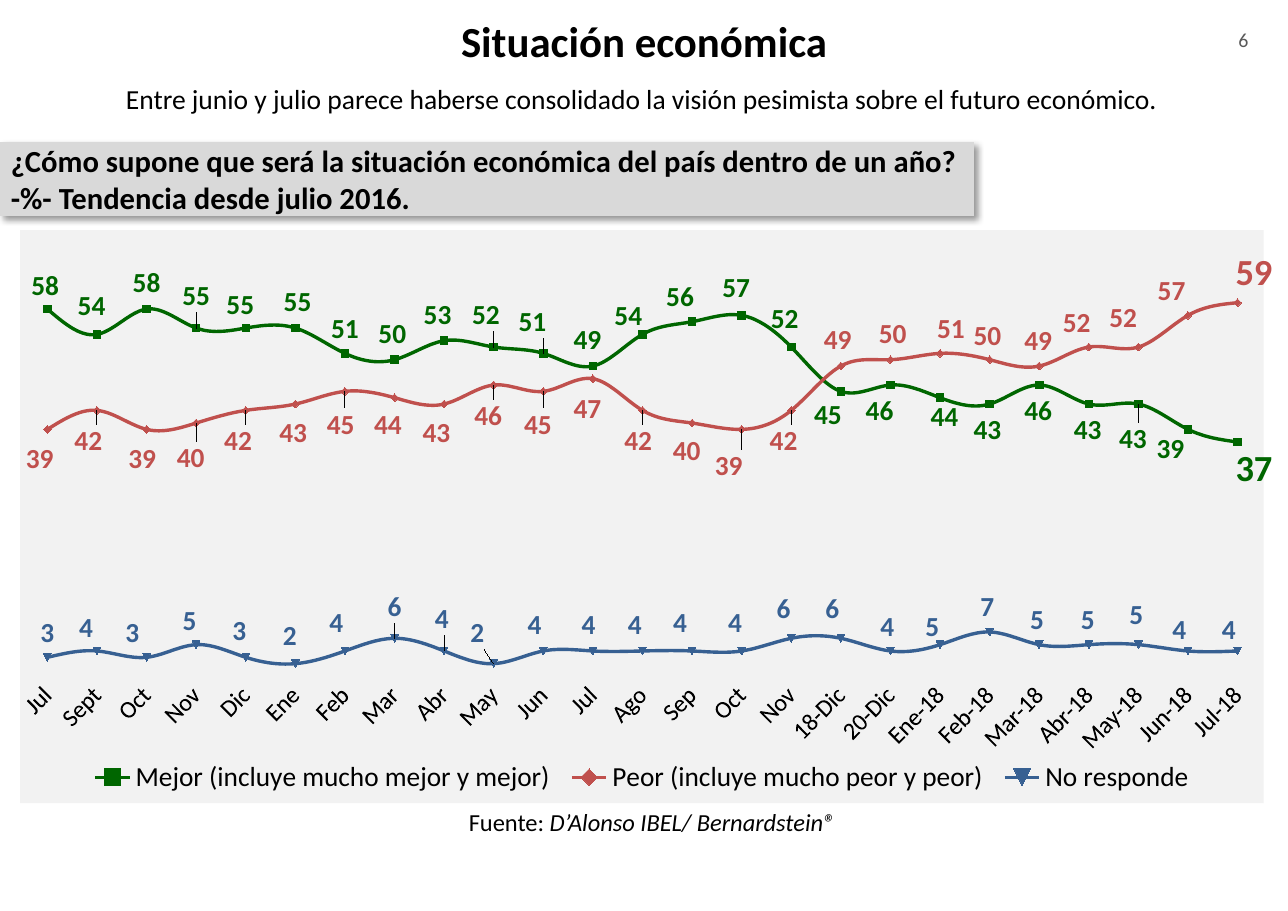
from lxml import etree
from pptx import Presentation
from pptx.chart.data import CategoryChartData
from pptx.dml.color import RGBColor
from pptx.enum.chart import (XL_CHART_TYPE, XL_LABEL_POSITION, XL_LEGEND_POSITION,
                             XL_MARKER_STYLE, XL_TICK_MARK)
from pptx.enum.shapes import MSO_SHAPE
from pptx.enum.text import MSO_ANCHOR, PP_ALIGN
from pptx.oxml import parse_xml
from pptx.oxml.ns import nsdecls, qn
from pptx.util import Inches, Pt

LINE = XL_CHART_TYPE.LINE_MARKERS
CENTER_LABEL = XL_LABEL_POSITION.CENTER
BOTTOM = XL_LEGEND_POSITION.BOTTOM
AUTO = XL_MARKER_STYLE.AUTOMATIC
NO_TICK = XL_TICK_MARK.NONE
RECT = MSO_SHAPE.RECTANGLE
TOP, MIDDLE = MSO_ANCHOR.TOP, MSO_ANCHOR.MIDDLE
LEFT, CENTER = PP_ALIGN.LEFT, PP_ALIGN.CENTER

COLORS = {"text": "000000", "number": "595959", "band": "D9D9D9", "panel": "F2F2F2",
          "better": "006600", "worse": "C0504D", "unknown": "376092"}
CHART_W, CHART_H = 11.38, 5.2


def style(font, size, color="text", bold=False):
    font.name = "Calibri"
    font.size = Pt(size)
    font.bold = bold
    font.color.rgb = RGBColor.from_string(COLORS[color])


def write(sp, box, lines, size, color="text", bold=False, align=CENTER, anchor=MIDDLE):
    sp.left, sp.top, sp.width, sp.height = [Inches(v) for v in box]
    tf = sp.text_frame
    tf.word_wrap = True
    tf.vertical_anchor = anchor
    for i, line in enumerate(lines):
        p = tf.paragraphs[0] if i == 0 else tf.add_paragraph()
        p.alignment = align
        for text, italic in line:
            r = p.add_run()
            r.text = text
            if italic:
                r.font.italic = True
        style(p.font, size, color, bold)


prs = Presentation()
prs.slide_width, prs.slide_height = Inches(11.69), Inches(8.27)
s = prs.slides.add_slide(prs.slide_layouts[5])
shapes = s.shapes

months = ["Jul", "Sept", "Oct", "Nov", "Dic", "Ene", "Feb", "Mar", "Abr", "May", "Jun", "Jul",
          "Ago", "Sep", "Oct", "Nov", "18-Dic", "20-Dic", "Ene-18", "Feb-18", "Mar-18",
          "Abr-18", "May-18", "Jun-18", "Jul-18"]
answers = [
    ("Mejor (incluye mucho mejor y mejor)", "better", 24,
     [58, 54, 58, 55, 55, 55, 51, 50, 53, 52, 51, 49, 54, 56, 57, 52, 45, 46, 44, 43, 46, 43, 43,
      39, 37],
     [(-2, -21), (-5, -26), (0, -24), (0, -29), (-5, -21), (2, -24), (0, -22), (-2, -24),
      (-6, -24), (-7, -29), (-10, -29), (-5, -24), (-13, -17), (-11, -23), (-5, -25), (-6, -26),
      (-12, 21), (-10, 23), (4, 17), (-2, 23), (-1, 23), (-1, 23), (-5, 32), (-16, 18), (15, 25)]),
    ("Peor (incluye mucho peor y peor)", "worse", 24,
     [39, 42, 39, 40, 42, 43, 45, 44, 43, 46, 45, 47, 42, 40, 39, 42, 49, 50, 51, 50, 49, 52, 52,
      57, 59],
     [(-7, 27), (-8, 28), (-4, 27), (-5, 32), (-7, 28), (-2, 26), (-4, 30), (-6, 25), (-7, 26),
      (-5, 28), (-5, 30), (-5, 27), (-4, 28), (-5, 25), (-12, 33), (-7, 28), (-3, -24), (2, -24),
      (10, -22), (-2, -22), (-1, -23), (-11, -22), (-14, -27), (-15, -22), (15, -27)]),
    ("No responde", "unknown", 18,
     [3, 4, 3, 5, 3, 2, 4, 6, 4, 2, 4, 4, 4, 4, 4, 6, 6, 4, 5, 7, 5, 5, 5, 4, 4],
     [(0, -22), (-10, -21), (-13, -22), (-6, -22), (-6, -24), (-5, -25), (-8, -26), (0, -29),
      (-2, -29), (-15, -28), (-8, -24), (-4, -24), (-7, -24), (-11, -26), (-6, -26), (-7, -27),
      (-8, -27), (-3, -22), (-7, -16), (-2, -23), (-2, -23), (-1, -23), (-2, -27), (-8, -19),
      (-8, -19)]),
]

data = CategoryChartData()
data.categories = months
for name, color, last_size, values, offsets in answers:
    data.add_series(name, values)
chart = shapes.add_chart(LINE, Inches(0.17), Inches(2.09), Inches(CHART_W), Inches(CHART_H),
                         data).chart
style(chart.font, 18)
chart.has_title = False
chart.has_legend = True
chart.legend.position = BOTTOM
chart.legend.include_in_layout = False
style(chart.legend.font, 18)

value_axis = chart.value_axis
value_axis.minimum_scale, value_axis.maximum_scale = 0, 70
value_axis.has_major_gridlines = False
value_axis.visible = False
month_axis = chart.category_axis
month_axis.major_tick_mark = NO_TICK
month_axis.format.line.fill.background()
style(month_axis.tick_labels.font, 16)
month_axis._element.find(qn("c:txPr")).find(qn("a:bodyPr")).set("rot", "-2700000")

for series, (name, color, last_size, values, offsets) in zip(chart.plots[0].series, answers):
    rgb = RGBColor.from_string(COLORS[color])
    series.smooth = True
    series.format.line.width = Pt(2.25)
    series.format.line.color.rgb = rgb
    marker = series.marker
    marker.style, marker.size = AUTO, 5
    marker.format.fill.solid()
    marker.format.fill.fore_color.rgb = rgb
    marker.format.line.color.rgb = rgb
    labels = series.data_labels
    labels.show_value = True
    labels.position = CENTER_LABEL
    style(labels.font, 18, color, True)
    for i in range(len(values)):
        label = series.points[i].data_label
        label.position = CENTER_LABEL
        style(label.font, last_size if i == len(values) - 1 else 18, color, True)
    for label, (dx, dy) in zip(series._element.iter(qn("c:dLbl")), offsets):
        label.find(qn("c:idx")).addnext(parse_xml(
            f'<c:layout {nsdecls("c")}><c:manualLayout><c:x val="{dx / 100 / CHART_W:.4f}"/>'
            f'<c:y val="{dy / 100 / CHART_H:.4f}"/></c:manualLayout></c:layout>'))
    series._element.find(qn("c:dLbls")).append(parse_xml(
        f'<c:extLst {nsdecls("c")}><c:ext uri="{{CE6537A1-D6FC-4f65-9D91-7224C49458BB}}" '
        'xmlns:c15="http://schemas.microsoft.com/office/drawing/2012/chart">'
        '<c15:showLeaderLines val="0"/></c:ext></c:extLst>'))

plot_area = chart._chartSpace.chart.plotArea
legend = chart.legend._element
for part in (plot_area, legend):
    for layout in part.findall(qn("c:layout")):
        part.remove(layout)
plot_layout, legend_layout = [parse_xml(
    f'<c:layout {nsdecls("c")}><c:manualLayout>{target}'
    f'<c:xMode val="edge"/><c:yMode val="edge"/><c:x val="{x}"/><c:y val="{y}"/>'
    f'<c:w val="{w}"/><c:h val="{h}"/></c:manualLayout></c:layout>')
    for target, x, y, w, h in [('<c:layoutTarget val="inner"/>', 0.002, 0.005, 0.997, 0.774),
                               ("", 0.05, 0.92, 0.9, 0.07)]]
plot_area.insert(0, plot_layout)
legend.find(qn("c:legendPos")).addnext(legend_layout)
chart._chartSpace.chart.addnext(parse_xml(
    f'<c:spPr {nsdecls("c", "a")}><a:solidFill><a:srgbClr val="{COLORS["panel"]}"/>'
    '</a:solidFill><a:ln><a:noFill/></a:ln></c:spPr>'))

number = shapes.add_textbox(0, 0, 0, 0)
write(number, (10.84, 0.2, 0.89, 0.44), [[("6", False)]], 13, "number", anchor=TOP)

question = shapes.add_shape(RECT, 0, 0, 0, 0)
question.fill.solid()
question.fill.fore_color.rgb = RGBColor.from_string(COLORS["band"])
question.line.fill.background()
question.shadow.inherit = False
shadow = etree.SubElement(question._element.spPr.find(qn("a:effectLst")), qn("a:outerShdw"),
                          blurRad=str(Pt(4)), dist=str(Pt(3)), dir="2700000", algn="tl")
shade = etree.SubElement(shadow, qn("a:srgbClr"), val=COLORS["text"])
etree.SubElement(shade, qn("a:alpha"), val="40000")
write(question, (0, 1.29, 8.84, 0.67),
      [[("¿Cómo supone que será la situación económica del país dentro de un año?", False)],
       [("-%- Tendencia desde julio 2016.", False)]], 20, bold=True, align=LEFT)

write(shapes.title, (0, -0.1, 11.69, 0.94), [[("Situación económica", False)]], 28, bold=True)

source = shapes.add_textbox(0, 0, 0, 0)
write(source, (4.11, 7.28, 3.62, 0.37),
      [[("Fuente: ", False), ("D’Alonso IBEL/ Bernardstein®", True)]], 16, anchor=TOP)

summary = shapes.add_textbox(0, 0, 0, 0)
write(summary, (-0.02, 0.69, 11.69, 0.4),
      [[("Entre junio y julio parece haberse consolidado la visión pesimista sobre el futuro "
         "económico.", False)]], 18)

prs.save("out.pptx")
